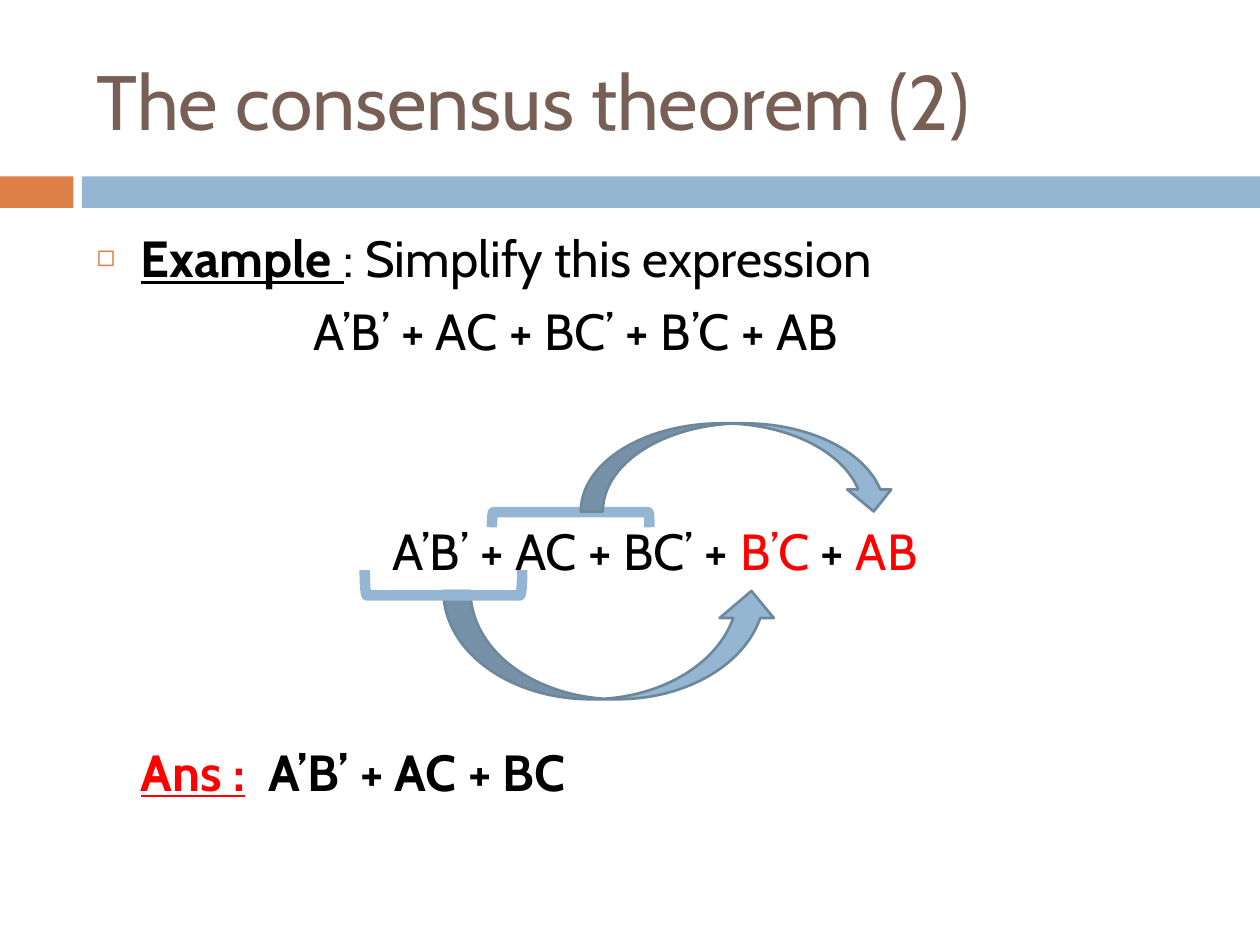
from lxml import etree
from pptx import Presentation
from pptx.dml.color import RGBColor
from pptx.enum.shapes import MSO_SHAPE
from pptx.enum.text import MSO_ANCHOR, MSO_AUTO_SIZE, PP_ALIGN
from pptx.oxml.ns import qn
from pptx.util import Pt

RECTANGLE = MSO_SHAPE.RECTANGLE
BRACKET = MSO_SHAPE.LEFT_BRACKET
ARROW_UP = MSO_SHAPE.CURVED_UP_ARROW
ARROW_DOWN = MSO_SHAPE.CURVED_DOWN_ARROW

FONT = "Cabin"
BLUE, BLUE_DARK, ORANGE = "94B6D2", "6D879B", "DD8047"
BROWN, BLACK, RED = "775F55", "000000", "FF0000"


def color(hex_string):
    return RGBColor.from_string(hex_string)


def add_figure(kind, left, top, width, height, fill=None, line=None, line_width=0, rotation=0):
    shape = slide.shapes.add_shape(kind, Pt(left), Pt(top), Pt(width), Pt(height))
    shape.shadow.inherit = False
    shape.rotation = rotation
    if fill:
        shape.fill.solid()
        shape.fill.fore_color.rgb = color(fill)
    else:
        shape.fill.background()
    if line:
        shape.line.color.rgb = color(line)
        shape.line.width = Pt(line_width)
    else:
        shape.line.fill.background()


presentation = Presentation()
presentation.slide_width = Pt(720)
presentation.slide_height = Pt(540)
slide = presentation.slides.add_slide(presentation.slide_layouts[1])

title = slide.shapes.title
title.left, title.top, title.width, title.height = Pt(48), Pt(18), Pt(642), Pt(78)
title.text_frame.text = "The consensus theorem (2)"
title.text_frame.vertical_anchor = MSO_ANCHOR.MIDDLE
title.text_frame.auto_size = MSO_AUTO_SIZE.NONE
heading = title.text_frame.paragraphs[0]
heading.alignment = PP_ALIGN.LEFT
heading.font.name = FONT
heading.font.size = Pt(44)
heading.font.color.rgb = color(BROWN)

body = slide.placeholders[1]
body.left, body.top, body.width, body.height = Pt(48), Pt(126), Pt(642), Pt(354)
body.text_frame.auto_size = MSO_AUTO_SIZE.NONE

# indent, space before, runs of (text, colour, bold, underline)
lines = [
    (25.2, 7, [("Example ", BLACK, True, True), (": Simplify this expression", BLACK, False, False)]),
    (124, 7, [("A’B’ + AC + BC’ + B’C + AB", BLACK, False, False)]),
    (169.2, 91, [("A’B’ + AC + BC’ + ", BLACK, False, False), ("B’C ", RED, False, False),
                 ("+ ", BLACK, False, False), ("AB", RED, False, False)]),
    (25.2, 91, [("Ans :", RED, True, True), ("  ", RED, True, False),
                ("A’B’ + AC + BC", BLACK, True, False)]),
]
for index, (indent, space_before, runs) in enumerate(lines):
    paragraph = body.text_frame.paragraphs[0] if index == 0 else body.text_frame.add_paragraph()
    paragraph.space_before = Pt(space_before)
    paragraph.font.name = FONT
    paragraph.font.size = Pt(29)
    properties = paragraph._p.get_or_add_pPr()
    properties.set("marL", str(Pt(indent)))
    if index == 0:
        properties.set("indent", str(-Pt(indent)))
        bullet_color = etree.SubElement(properties, qn("a:buClr"))
        etree.SubElement(bullet_color, qn("a:srgbClr"), val=ORANGE)
        etree.SubElement(properties, qn("a:buSzPct"), val="60000")
        etree.SubElement(properties, qn("a:buChar"), char="◻")
        properties.append(properties.find(qn("a:defRPr")))
    else:
        properties.set("indent", "0")
        properties.find(qn("a:defRPr")).addprevious(etree.Element(qn("a:buNone")))
    for text, text_color, bold, underline in runs:
        run = paragraph.add_run()
        run.text = text
        run.font.color.rgb = color(text_color)
        run.font.bold = bold
        run.font.underline = underline

add_figure(RECTANGLE, 0, 100.8, 42, 18, fill=ORANGE)
add_figure(RECTANGLE, 46.8, 100.8, 673.2, 18, fill=BLUE)
add_figure(ARROW_UP, 253.4, 337.7, 191.5, 61.9, BLUE, BLUE_DARK, 1.5)
add_figure(BRACKET, 246.2, 288, 14.4, 90, line=BLUE, line_width=6, rotation=270)
add_figure(BRACKET, 321.8, 252, 8.6, 90, line=BLUE, line_width=6, rotation=90)
add_figure(ARROW_DOWN, 331.9, 241.9, 180, 50.4, BLUE, BLUE_DARK, 1.5)

presentation.save("out.pptx")
